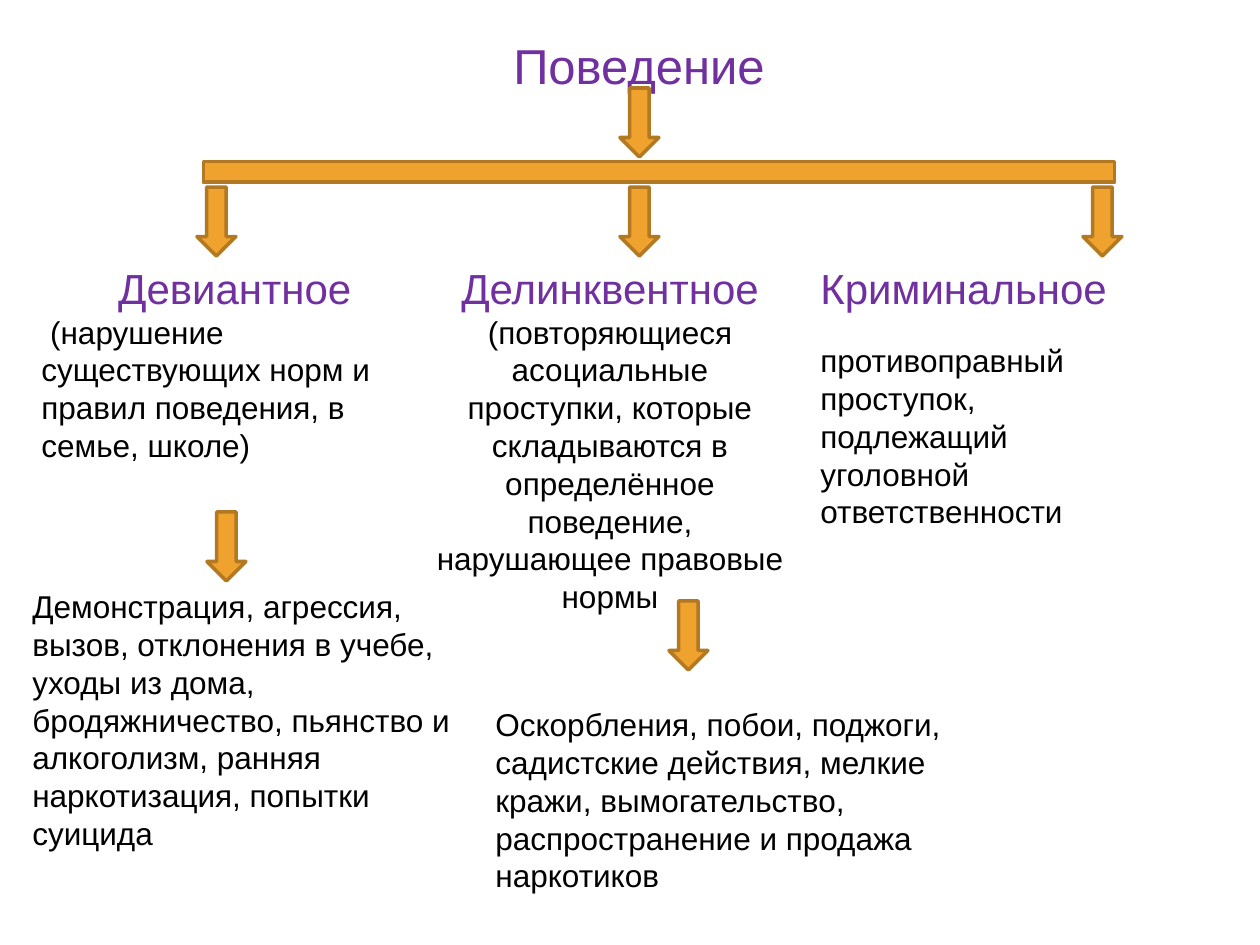
from pptx import Presentation
from pptx.dml.color import RGBColor
from pptx.enum.shapes import MSO_SHAPE
from pptx.enum.text import MSO_AUTO_SIZE, PP_ALIGN
from pptx.util import Emu, Pt

PX = 914400 / 126
FONT = "Arial"
PURPLE = RGBColor(0x70, 0x30, 0xA0)
BLACK = RGBColor(0x00, 0x00, 0x00)
ORANGE = RGBColor(0xF0, 0xA2, 0x2E)
BROWN = RGBColor(0xB2, 0x78, 0x22)

TITLE = (28, PURPLE)
HEADING = (24, PURPLE)
BODY = (18, BLACK)

ARROW_W, ARROW_H = 39, 69
BRANCH_TOP = 256


def px(*lengths):
    return [Emu(round(n * PX)) for n in lengths]


def add_text(slide, box, *paragraphs):
    """Each paragraph is an alignment followed by (text, style) runs."""
    tf = slide.shapes.add_textbox(*px(*box)).text_frame
    tf.word_wrap = True
    tf.auto_size = MSO_AUTO_SIZE.SHAPE_TO_FIT_TEXT
    for i, (align, *runs) in enumerate(paragraphs):
        p = tf.add_paragraph() if i else tf.paragraphs[0]
        p.alignment = align
        for text, (size, color) in runs:
            r = p.add_run()
            r.text = text
            r.font.name = FONT
            r.font.size = Pt(size)
            r.font.color.rgb = color


def add_block(slide, kind, box):
    s = slide.shapes.add_shape(kind, *px(*box))
    s.shadow.inherit = False
    s.fill.solid()
    s.fill.fore_color.rgb = ORANGE
    s.line.color.rgb = BROWN
    s.line.width = Pt(2)


def add_arrow(slide, left, top):
    add_block(slide, MSO_SHAPE.DOWN_ARROW, (left, top, ARROW_W, ARROW_H))


def main():
    prs = Presentation()
    prs.slide_width, prs.slide_height = px(1260, 945)
    slide = prs.slides.add_slide(prs.slide_layouts[6])
    left, center = PP_ALIGN.LEFT, PP_ALIGN.CENTER

    add_text(slide, (413, 29, 452, 72), (center, ("Поведение", TITLE)))
    add_arrow(slide, 620, 88)
    add_block(slide, MSO_SHAPE.MATH_MINUS, (39, 128, 1240, 88))
    for x in (197, 620, 1083):
        add_arrow(slide, x, 187)

    add_text(slide, (29, BRANCH_TOP, 423, 292),
             (center, ("Девиантное ", HEADING)),
             (left, (" (нарушение существующих норм и правил поведения, "
                     "в семье, школе)", BODY)))
    add_text(slide, (808, BRANCH_TOP, 335, 64),
             (left, ("Криминальное", HEADING)))
    add_text(slide, (423, BRANCH_TOP, 374, 407),
             (center, ("Делинквентное ", HEADING),
              ("(повторяющиеся асоциальные проступки, которые складываются "
               "в определённое поведение, нарушающее правовые нормы", BODY)))

    add_arrow(slide, 207, 512)
    add_arrow(slide, 669, 601)
    add_text(slide, (20, 581, 444, 318),
             (left, ("Демонстрация, агрессия, вызов, отклонения в учебе, "
                     "уходы из дома, бродяжничество, пьянство и алкоголизм, "
                     "ранняя наркотизация, попытки суицида", BODY)))
    add_text(slide, (483, 699, 473, 204),
             (left, ("Оскорбления, побои, поджоги, садистские действия, "
                     "мелкие кражи, вымогательство, распространение и продажа "
                     "наркотиков", BODY)))
    add_text(slide, (808, 335, 354, 204),
             (left, ("противоправный проступок, подлежащий уголовной "
                     "ответственности", BODY)))

    prs.save("out.pptx")


if __name__ == "__main__":
    main()
